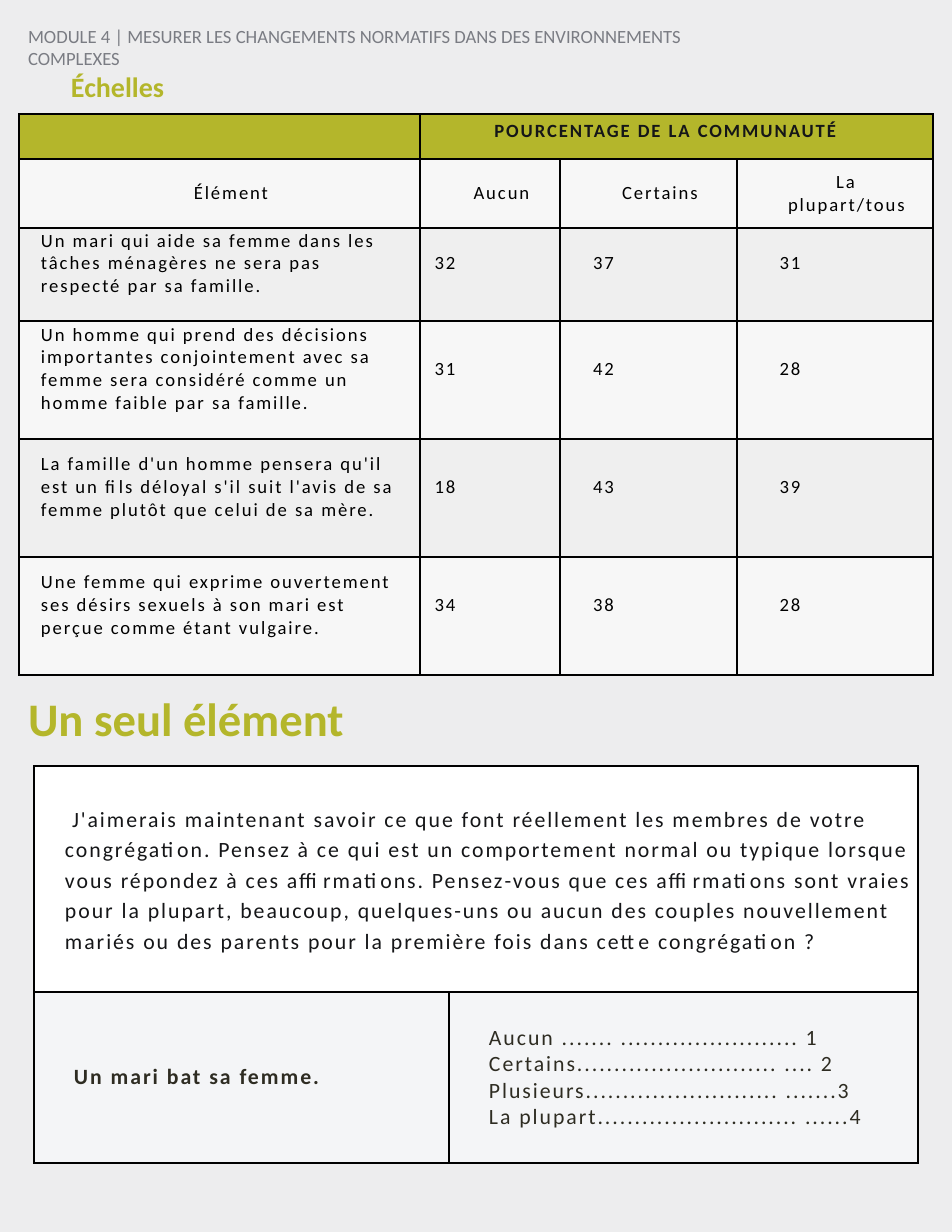
import lxml.etree
import pptx
import pptx.dml.color
import pptx.enum.text
import pptx.oxml.ns
import pptx.util

RGB = pptx.dml.color.RGBColor
ALIGN = pptx.enum.text.PP_ALIGN
ANCHOR = pptx.enum.text.MSO_ANCHOR
qn = pptx.oxml.ns.qn

PAPER = RGB(0xED, 0xED, 0xEE)
OLIVE = RGB(0xB4, 0xB6, 0x2B)
GRAY = RGB(0x7A, 0x7C, 0x83)
INK = RGB(0x15, 0x16, 0x18)
BROWN = RGB(0x2E, 0x2C, 0x22)
BLACK = RGB(0, 0, 0)
WHITE = RGB(0xFF, 0xFF, 0xFF)
LIGHT = RGB(0xF7, 0xF7, 0xF7)
BAND = RGB(0xEF, 0xEF, 0xEF)
COOL = RGB(0xF4, 0xF5, 0xF7)

# Content: text, box, wrap, line spacing, font
TITLES = [
    ("MODULE 4 | MESURER LES CHANGEMENTS NORMATIFS DANS DES ENVIRONNEMENTS COMPLEXES",
     (17, 19, 756, 28), True, 1.0, {"size": 12, "color": GRAY}),
    ("Échelles", (60, 68, 793, 65), True, 0.9,
     {"size": 18, "color": OLIVE, "bold": True}),
    ("Un seul élément", (17, 691, 384, 63), False, 0.9,
     {"size": 30, "color": OLIVE, "bold": True}),
]
GROUP = "POURCENTAGE DE LA COMMUNAUTÉ"
HEADS = ["Élément", "Aucun", "Certains", "La plupart/tous"]
ITEMS = [
    ("Un mari qui aide sa femme dans les tâches ménagères ne sera pas "
     "respecté par sa famille.", 32, 37, 31),
    ("Un homme qui prend des décisions importantes conjointement avec sa "
     "femme sera considéré comme un homme faible par sa famille.", 31, 42, 28),
    ("La famille d'un homme pensera qu'il est un fils déloyal s'il suit "
     "l'avis de sa femme plutôt que celui de sa mère.", 18, 43, 39),
    ("Une femme qui exprime ouvertement ses désirs sexuels à son mari est "
     "perçue comme étant vulgaire.", 34, 38, 28),
]
PROMPT = (
    "J'aimerais maintenant savoir ce que font réellement les membres de votre "
    "congrégation. Pensez à ce qui est un comportement normal ou typique lorsque "
    "vous répondez à ces affirmations. Pensez-vous que ces affirmations sont vraies "
    "pour la plupart, beaucoup, quelques-uns ou aucun des couples nouvellement "
    "mariés ou des parents pour la première fois dans cette congrégation ?")
CLAIM = "Un mari bat sa femme."
SCALE = [
    "Aucun ....... ........................ 1",
    "Certains........................... .... 2",
    "Plusieurs.......................... .......3",
    "La plupart........................... ......4",
]

# Layout in px, 112 to the inch
SCALES = {"left": 19, "top": 114, "cols": [401, 140, 177, 196],
          "rows": [45, 69, 93, 118, 118, 118]}
SINGLE = {"left": 34, "top": 766, "cols": [415, 469], "rows": [226, 171]}
TRACK = 125  # letter spacing, hundredths of a point

# Cell formats: insets are left, top, right, bottom
GROUP_FMT = {"inset": (0, 0, 22, 11), "align": ALIGN.CENTER,
             "font": {"size": 12, "color": INK, "bold": True}}
HEAD_FMT = {"inset": (45, 11, 22, 11), "align": ALIGN.CENTER,
            "font": {"size": 12, "color": BLACK}}
ITEM_FMT = {"inset": (22, 0, 22, 22), "font": {"size": 12, "color": BLACK}}
VALUE_FMT = {"inset": (0, 0, 90, 22), "align": ALIGN.CENTER,
             "font": {"size": 12, "color": BLACK}}
PROMPT_FMT = {"inset": (11, 0, 0, 0), "indent": (20, 7), "spacing": 1.15,
              "font": {"size": 14, "color": INK}}
CLAIM_FMT = {"inset": (40, 11, 18, 11),
             "font": {"size": 14, "color": BROWN, "bold": True}}
SCALE_FMT = {"inset": (40, 11, 18, 11), "indent": (20, -20),
             "font": {"size": 14, "color": BROWN}}


def px(n):
    return pptx.util.Emu(round(n * 914400 / 112))


def style(font, fmt):
    font.name = "Calibri"
    font.size = pptx.util.Pt(fmt["size"])
    font.bold = fmt.get("bold", False)
    font.color.rgb = fmt["color"]


def add_title(slide, text, box, wrap, spacing, fmt):
    frame = slide.shapes.add_textbox(*map(px, box)).text_frame
    frame.word_wrap = wrap
    par = frame.paragraphs[0]
    par.line_spacing = spacing
    run = par.add_run()
    run.text = text
    style(run.font, fmt)


def add_grid(slide, plan):
    cols, rows = plan["cols"], plan["rows"]
    table = slide.shapes.add_table(
        len(rows), len(cols), px(plan["left"]), px(plan["top"]),
        px(sum(cols)), px(sum(rows))).table
    table.first_row = table.horz_banding = False
    for col, width in zip(table.columns, cols):
        col.width = px(width)
    for row, height in zip(table.rows, rows):
        row.height = px(height)
    for cell in table.iter_cells():
        add_edges(cell)
    return table


def add_edges(cell):
    props = cell._tc.get_or_add_tcPr()
    for side in "LRTB":
        line = lxml.etree.SubElement(props, qn(f"a:ln{side}"), w="12700")
        fill = lxml.etree.SubElement(line, qn("a:solidFill"))
        lxml.etree.SubElement(fill, qn("a:srgbClr"), val=str(BLACK))


def paint(cell, color):
    cell.fill.solid()
    cell.fill.fore_color.rgb = color


def fill_cell(cell, lines, fmt, color):
    paint(cell, color)
    cell.vertical_anchor = ANCHOR.MIDDLE
    for side, inset in zip(("left", "top", "right", "bottom"), fmt["inset"]):
        setattr(cell, f"margin_{side}", px(inset))
    frame = cell.text_frame
    margin, indent = fmt.get("indent", (0, 0))
    for i, text in enumerate(lines):
        par = frame.add_paragraph() if i else frame.paragraphs[0]
        par.alignment = fmt.get("align", ALIGN.LEFT)
        par.line_spacing = fmt.get("spacing", 1.0)
        props = par._p.get_or_add_pPr()
        props.set("marL", str(px(margin)))
        props.set("indent", str(px(indent)))
        run = par.add_run()
        run.text = text
        style(run.font, fmt["font"])
        run._r.get_or_add_rPr().set("spc", str(TRACK))


def add_scales(slide):
    table = add_grid(slide, SCALES)
    table.cell(0, 1).merge(table.cell(0, 3))
    paint(table.cell(0, 0), OLIVE)
    fill_cell(table.cell(0, 1), [GROUP], GROUP_FMT, OLIVE)
    for c, head in enumerate(HEADS):
        fill_cell(table.cell(1, c), [head], HEAD_FMT, LIGHT)
    for r, item in enumerate(ITEMS, 2):
        for c, value in enumerate(item):
            fill_cell(table.cell(r, c), [str(value)],
                      VALUE_FMT if c else ITEM_FMT, LIGHT if r % 2 else BAND)


def add_single(slide):
    table = add_grid(slide, SINGLE)
    table.cell(0, 0).merge(table.cell(0, 1))
    fill_cell(table.cell(0, 0), [PROMPT], PROMPT_FMT, WHITE)
    fill_cell(table.cell(1, 0), [CLAIM], CLAIM_FMT, COOL)
    fill_cell(table.cell(1, 1), SCALE, SCALE_FMT, COOL)


def main():
    deck = pptx.Presentation()
    deck.slide_width, deck.slide_height = px(952), px(1232)
    slide = deck.slides.add_slide(deck.slide_layouts[6])
    slide.background.fill.solid()
    slide.background.fill.fore_color.rgb = PAPER
    for title in TITLES:
        add_title(slide, *title)
    add_scales(slide)
    add_single(slide)
    deck.save("out.pptx")


if __name__ == "__main__":
    main()
